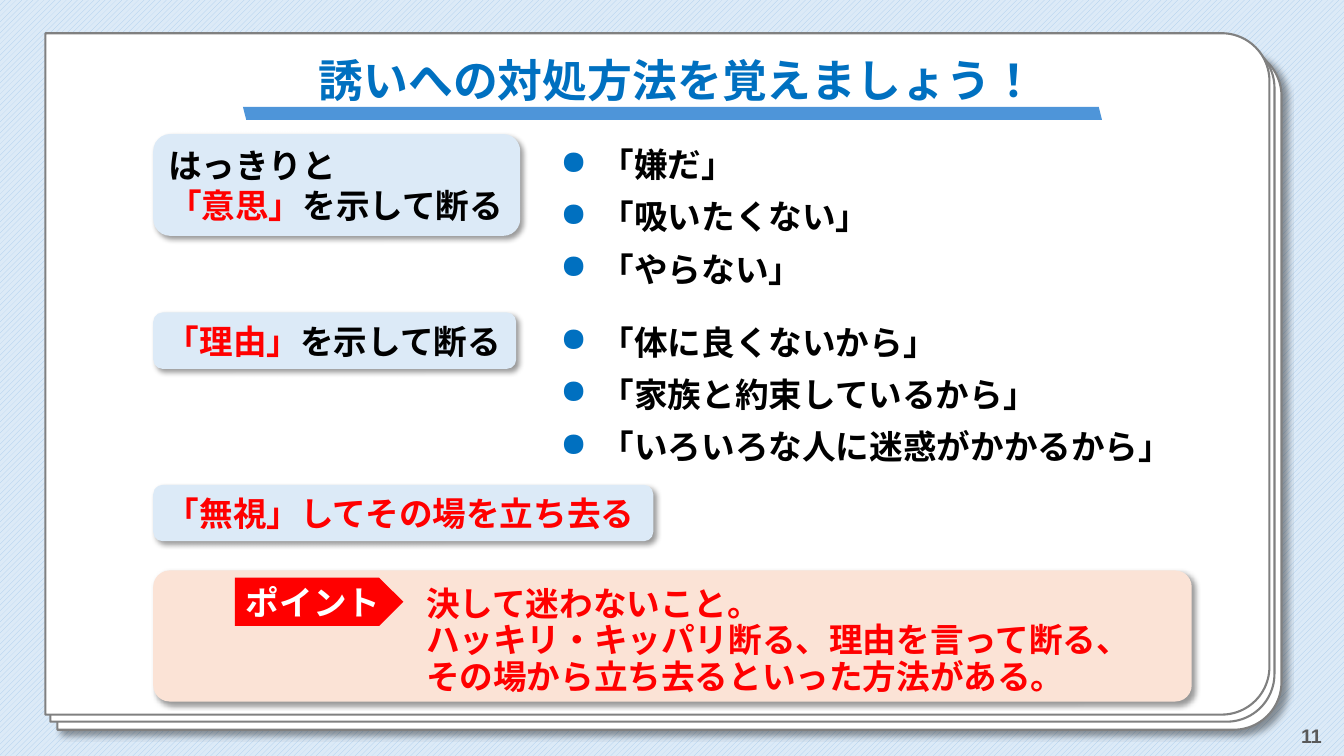
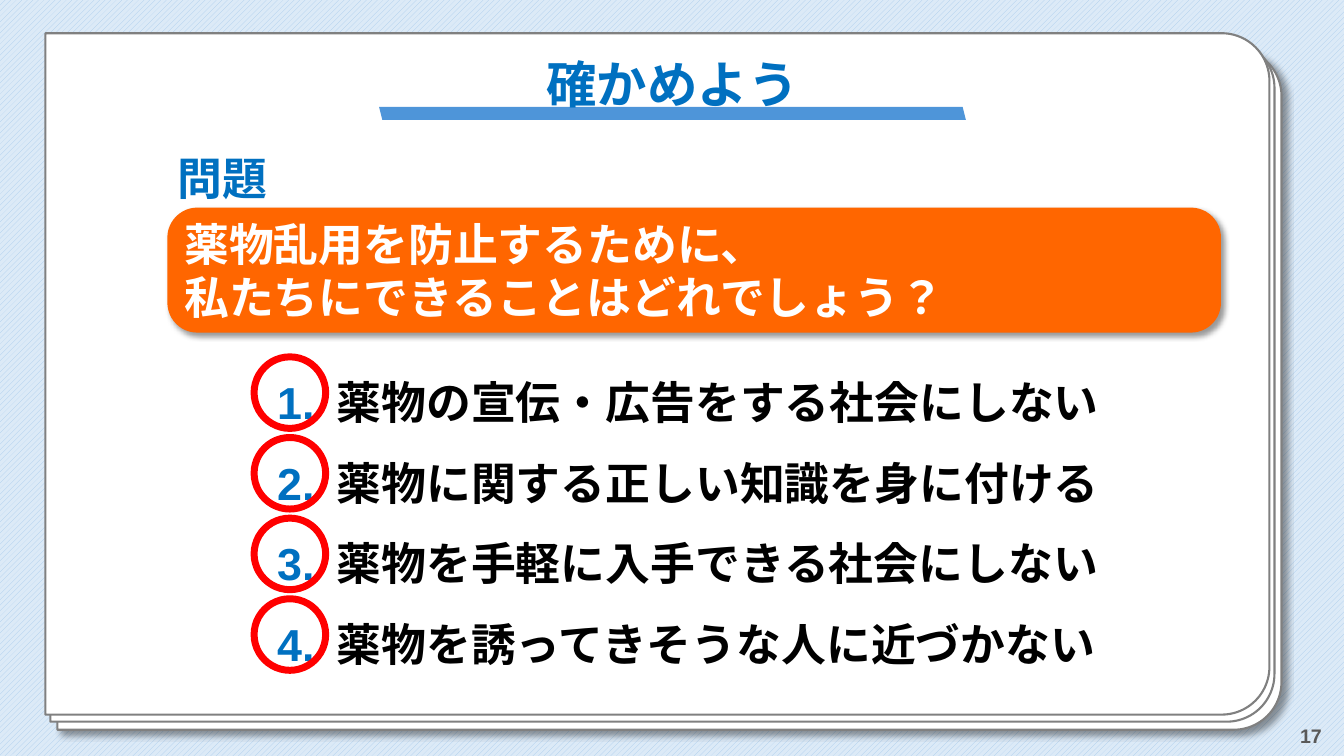
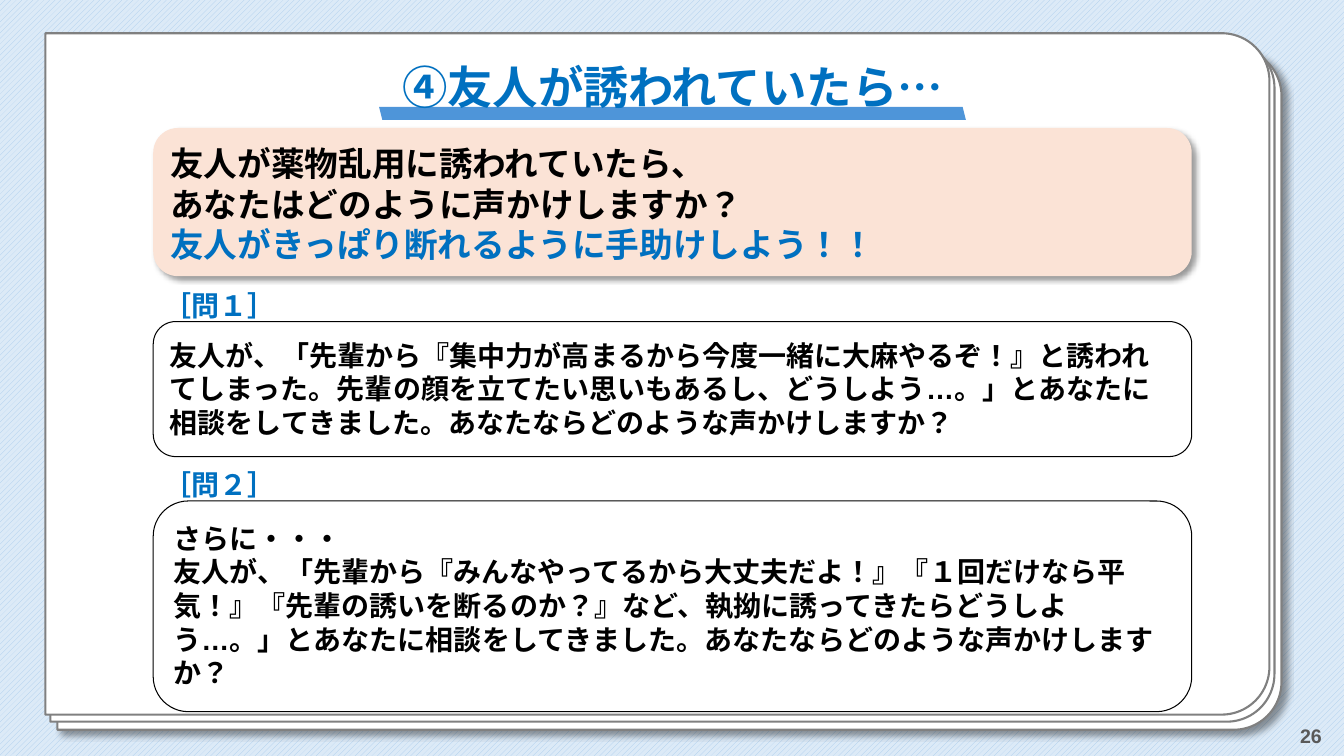
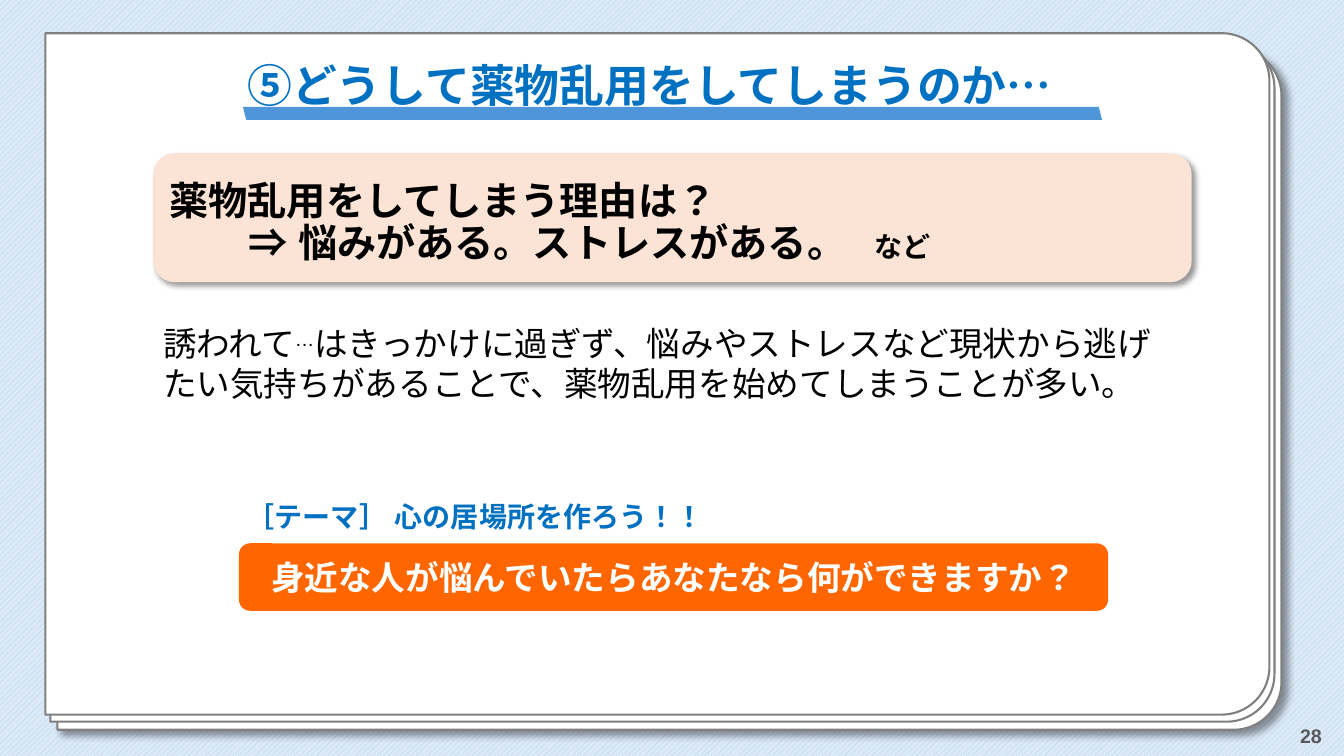
from lxml import etree
from pptx import Presentation
from pptx.dml.color import RGBColor
from pptx.enum.dml import MSO_PATTERN
from pptx.enum.shapes import MSO_SHAPE
from pptx.enum.text import MSO_ANCHOR, PP_ALIGN
from pptx.oxml.ns import qn
from pptx.util import Inches, Pt

COLORS = {
    "stripe": "A6CAEC", "pale_blue": "DCEAF7", "white": "FFFFFF",
    "gray": "808080", "page": "595959", "blue": "0070C0", "bar": "4E95D9",
    "black": "000000", "red": "FF0000", "peach": "FBE3D6", "orange": "FF6600",
}
LATIN = "Arial"
JAPANESE = "Noto Sans CJK JP"
LEFT, CENTER, RIGHT = PP_ALIGN.LEFT, PP_ALIGN.CENTER, PP_ALIGN.RIGHT
TOP, MIDDLE, BOTTOM = MSO_ANCHOR.TOP, MSO_ANCHOR.MIDDLE, MSO_ANCHOR.BOTTOM
ROUNDED, SHEET = MSO_SHAPE.ROUNDED_RECTANGLE, MSO_SHAPE.ROUND_2_SAME_RECTANGLE
PARALLELOGRAM, PENTAGON, OVAL = MSO_SHAPE.PARALLELOGRAM, MSO_SHAPE.PENTAGON, MSO_SHAPE.OVAL
DIAGONAL = MSO_PATTERN.WIDE_UPWARD_DIAGONAL

CONTENT_LEFT, CONTENT_WIDTH = 1.52, 10.3
EVEN = (0.1, 0.1, 0.1, 0.1)
WIDE_BAR = (2.41, 8.52)
NARROW_BAR = (3.76, 5.82)


def rgb(name):
    return RGBColor.from_string(COLORS[name])


def add_child(parent, tag, **attributes):
    return etree.SubElement(parent, qn(tag), attributes)


def add_shadow(shape, distance):
    effects = add_child(shape.element.spPr, "a:effectLst")
    shadow = add_child(effects, "a:outerShdw", blurRad=str(Pt(4)), dist=str(Pt(distance)),
                       dir="2700000", algn="tl", rotWithShape="0")
    color = add_child(shadow, "a:srgbClr", val=COLORS["black"])
    add_child(color, "a:alpha", val="40000")


def add_shape(slide, kind, box, fill=None, line=None, width=0.75, shadow=0, adjust=()):
    shape = slide.shapes.add_shape(kind, *map(Inches, box))
    for index, value in enumerate(adjust):
        shape.adjustments[index] = value
    if fill:
        shape.fill.solid()
        shape.fill.fore_color.rgb = rgb(fill)
    else:
        shape.fill.background()
    if line:
        shape.line.color.rgb = rgb(line)
        shape.line.width = Pt(width)
    else:
        shape.line.fill.background()
    if shadow:
        add_shadow(shape, shadow)
    else:
        shape.shadow.inherit = False
    return shape


def set_indent(paragraph, left, first):
    properties = paragraph._p.get_or_add_pPr()
    properties.set("marL", str(Inches(left)))
    properties.set("indent", str(Inches(first)))


def set_bullet(paragraph, bullet):
    properties = paragraph._p.get_or_add_pPr()
    add_child(add_child(properties, "a:buClr"), "a:srgbClr", val=COLORS["blue"])
    if bullet == "number":
        add_child(properties, "a:buFont", typeface="+mj-lt")
        add_child(properties, "a:buAutoNum", type="arabicPeriod")
    else:
        add_child(properties, "a:buChar", char=bullet)


def add_run(paragraph, text, size, color, bold, font, baseline=None):
    for index, line in enumerate(text.split("\n")):
        if index:
            paragraph.add_line_break()
        if not line:
            continue
        run = paragraph.add_run()
        run.text = line
        run.font.size = Pt(size)
        run.font.bold = bold
        run.font.name = font
        run.font.color.rgb = rgb(color)
        properties = run._r.get_or_add_rPr()
        properties.set("lang", "ja-JP")
        add_child(properties, "a:ea", typeface=font)
        if baseline:
            properties.set("baseline", baseline)


def write_text(shape, *paragraphs, size=24, color="black", bold=True, font=LATIN,
               align=LEFT, anchor=TOP, insets=(0.1, 0.05, 0.1, 0.05), spacing=None,
               bullet=None, indent=None, wrap=True):
    frame = shape.text_frame
    frame.word_wrap = wrap
    frame.vertical_anchor = anchor
    (frame.margin_left, frame.margin_top,
     frame.margin_right, frame.margin_bottom) = map(Inches, insets)
    for index, runs in enumerate(paragraphs):
        paragraph = frame.add_paragraph() if index else frame.paragraphs[0]
        paragraph.alignment = align
        if spacing:
            paragraph.line_spacing = spacing
        if indent:
            set_indent(paragraph, *indent)
        if bullet:
            set_bullet(paragraph, bullet)
        if isinstance(runs, str):
            runs = [(runs, {})]
        for text, changes in runs:
            style = {"size": size, "color": color, "bold": bold, "font": font}
            add_run(paragraph, text, **{**style, **changes})
    return shape


def add_text(slide, box, *paragraphs, **style):
    return write_text(slide.shapes.add_textbox(*map(Inches, box)), *paragraphs, **style)


def add_label(slide, box, runs):
    label = add_shape(slide, ROUNDED, box, fill="pale_blue", shadow=3)
    write_text(label, runs, font=JAPANESE, anchor=MIDDLE)


def add_panel(slide, top, height, adjust=()):
    return add_shape(slide, ROUNDED, (CONTENT_LEFT, top, CONTENT_WIDTH, height),
                     fill="peach", shadow=3, adjust=adjust)


def add_quotes(slide, top, width, *quotes):
    add_text(slide, (5.46, top, width, 1.63), *quotes,
             spacing=1.3, bullet="●", indent=(0.4, -0.4))


def add_question(slide, top, caption, height, *paragraphs):
    add_shape_box = (CONTENT_LEFT, top + 0.43, CONTENT_WIDTH, height)
    question = add_shape(slide, ROUNDED, add_shape_box, fill="white", line="black")
    write_text(question, *paragraphs, size=20, insets=EVEN)
    add_text(slide, (CONTENT_LEFT, top, CONTENT_WIDTH, 0.54), caption,
             size=20, color="blue", insets=EVEN)


def start_slide(presentation, number, title, box, bar, size=32, font=JAPANESE,
                insets=(0.1, 0.05, 0.1, 0.05)):
    slide = presentation.slides.add_slide(presentation.slide_layouts[6])
    for left, top, shadow in ((3.26, -2.21, 5), (3.19, -2.29, 0), (3.14, -2.36, 0)):
        sheet = add_shape(slide, SHEET, (left, top, 6.76, 12.14), fill="white",
                          line="gray", width=1.5, shadow=shadow, adjust=(0.07, 0))
        sheet.rotation = 90
    bar_left, bar_width = bar
    underline = add_shape(slide, PARALLELOGRAM, (bar_left, 1.06, bar_width, 0.13), fill="bar")
    underline.element.spPr.get_or_add_xfrm().set("flipH", "1")
    add_text(slide, box, title, size=size, color="blue", font=font, align=CENTER,
             anchor=BOTTOM, spacing=0.9, insets=insets)
    add_text(slide, (10.21, 7.1, 3, 0.4), number, size=14, color="page",
             align=RIGHT, anchor=MIDDLE)
    return slide


def build_refusal(presentation):
    slide = start_slide(presentation, "11", "誘いへの対処方法を覚えましょう！",
                        (3.03, 0.57, 7.38, 0.61), WIDE_BAR, insets=(0.1, 0, 0.1, 0.12))
    red = {"color": "red"}
    add_label(slide, (CONTENT_LEFT, 1.33, 3.64, 1.01),
              [("はっきりと\n", {}), ("「意思」", red), ("を示して断る", {})])
    add_label(slide, (CONTENT_LEFT, 3.1, 3.6, 0.56),
              [("「理由」", red), ("を示して断る", {})])
    add_label(slide, (CONTENT_LEFT, 4.81, 4.96, 0.56),
              [("「無視」してその場を立ち去る", red)])
    add_quotes(slide, 1.26, 3.29, "「嫌だ」", "「吸いたくない」", "「やらない」")
    add_quotes(slide, 3.02, 6.32, "「体に良くないから」", "「家族と約束しているから」",
               "「いろいろな人に迷惑がかかるから」")
    write_text(add_panel(slide, 5.66, 1.3, adjust=(0.125,)),
               "決して迷わないこと。\nハッキリ・キッパリ断る、理由を言って断る、\n"
               "その場から立ち去るといった方法がある。",
               color="red", anchor=MIDDLE, insets=(0.1, 0.12, 0.1, 0),
               spacing=0.9, indent=(2.56, 0))
    point = add_shape(slide, PENTAGON, (2.33, 5.73, 1.67, 0.48), fill="red")
    write_text(point, "ポイント", color="white", align=CENTER, anchor=MIDDLE,
               insets=(0.1, 0.04, 0.1, 0.04), wrap=False)


def build_quiz(presentation):
    slide = start_slide(presentation, "17", "確かめよう", (3.76, 0.33, 5.82, 0.85),
                        NARROW_BAR, size=36, font=LATIN)
    add_text(slide, (1.66, 1.49, 1.1, 0.59), "問題", size=32, color="blue",
             font=JAPANESE, anchor=BOTTOM, spacing=0.9, wrap=False)
    question = add_shape(slide, ROUNDED, (1.66, 2.06, 10.45, 1.24), fill="orange",
                         shadow=3, adjust=(0.24,))
    write_text(question, "薬物乱用を防止するために、\n私たちにできることはどれでしょう？",
               size=32, color="white", insets=(0.08, 0, 0.08, 0))
    answers = ("薬物の宣伝・広告をする社会にしない", "薬物に関する正しい知識を身に付ける",
               "薬物を手軽に入手できる社会にしない", "薬物を誘ってきそうな人に近づかない")
    add_text(slide, (1.67, 3.29, 9.98, 3.36), *answers, size=32, spacing=1.5,
             bullet="number", indent=(1.57, -0.59), insets=(0.1, 0.16, 0.1, 0.05))
    for index in range(len(answers)):
        add_shape(slide, OVAL, (2.52, 3.54 + 0.8 * index, 0.71, 0.71), line="red", width=5)


def build_friend(presentation):
    slide = start_slide(presentation, "26", "④友人が誘われていたら…",
                        (3.76, 0.33, 5.82, 0.85), NARROW_BAR, size=32.4)
    write_text(add_panel(slide, 1.27, 1.47),
               [("友人が薬物乱用に誘われていたら、\nあなたはどのように声かけしますか？\n", {}),
                ("友人がきっぱり断れるように手助けしよう！！", {"color": "blue"})],
               insets=(0.1, 0.08, 0.1, 0))
    add_question(slide, 2.76, "［問１］", 1.34,
                 "友人が、「先輩から『集中力が高まるから今度一緒に大麻やるぞ！』と誘われてしまった。"
                 "先輩の顔を立てたい思いもあるし、どうしよう…。」とあなたに相談をしてきました。"
                 "あなたならどのような声かけしますか？")
    add_question(slide, 4.54, "［問２］", 2.09, "さらに・・・",
                 "友人が、「先輩から『みんなやってるから大丈夫だよ！』『１回だけなら平気！』"
                 "『先輩の誘いを断るのか？』など、執拗に誘ってきたらどうしよう…。」"
                 "とあなたに相談をしてきました。あなたならどのような声かけしますか？")


def build_reason(presentation):
    slide = start_slide(presentation, "28", "⑤どうして薬物乱用をしてしまうのか…",
                        (1.23, 0.21, 10.87, 0.98), WIDE_BAR, insets=(0.1, 0, 0.54, 0.08))
    reason = write_text(add_panel(slide, 1.52, 1.28), "薬物乱用をしてしまう理由は？",
                        [("⇒ 悩みがある。ストレスがある。", {}), ("　など", {"size": 20})],
                        size=28, anchor=MIDDLE, spacing=0.9, insets=(0.1, 0.12, 0.1, 0))
    set_indent(reason.text_frame.paragraphs[1], 0.78, 0)
    add_text(slide, (CONTENT_LEFT, 3.1, CONTENT_WIDTH, 1.01),
             [("誘われて", {}), ("…", {"baseline": "30000"}),
              ("はきっかけに過ぎず、悩みやストレスなど現状から逃げたい気持ちがあることで、"
               "薬物乱用を始めてしまうことが多い。", {})],
             bold=False, insets=EVEN)
    add_text(slide, (2.35, 4.86, 8.63, 0.54), "［テーマ］ 心の居場所を作ろう！！",
             size=20, color="blue", insets=EVEN)
    theme = add_shape(slide, ROUNDED, (2.37, 5.39, 8.62, 0.67), fill="orange")
    write_text(theme, "身近な人が悩んでいたらあなたなら何ができますか？", color="white",
               align=CENTER, anchor=MIDDLE, insets=EVEN)


def main():
    presentation = Presentation()
    presentation.slide_width = Inches(13.33)
    presentation.slide_height = Inches(7.5)
    background = presentation.slide_master.background.fill
    background.patterned()
    background.pattern = DIAGONAL
    background.fore_color.rgb = rgb("stripe")
    background.back_color.rgb = rgb("pale_blue")
    for build in (build_refusal, build_quiz, build_friend, build_reason):
        build(presentation)
    presentation.save("out.pptx")


if __name__ == "__main__":
    main()
